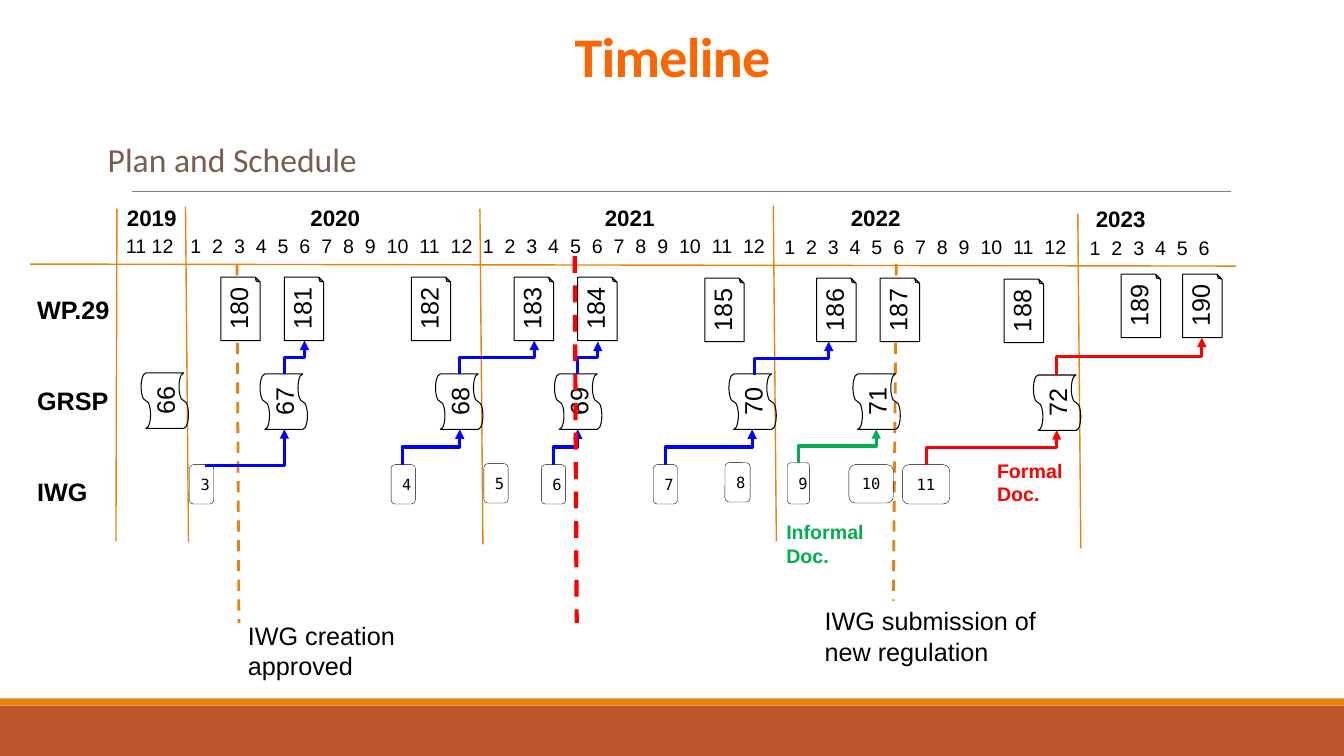
from lxml.etree import SubElement
from pptx import Presentation
from pptx.dml.color import RGBColor
from pptx.enum.dml import MSO_LINE
from pptx.enum.shapes import MSO_CONNECTOR, MSO_SHAPE
from pptx.enum.text import MSO_ANCHOR, MSO_AUTO_SIZE, PP_ALIGN
from pptx.oxml.ns import qn
from pptx.util import Cm, Pt

BLACK, ORANGE, RED, BLUE, GREEN = "000000", "E48312", "FF0000", "0000FF", "00B050"
YEAR = "1  2  3  4  5  6  7  8  9  10  11  12"


def inch(value):
    return Cm(value * 2.54)


def color(code):
    return RGBColor.from_string(code)


def write(frame, text, size=18, font="Arial", ink=BLACK, bold=False,
          align=PP_ALIGN.LEFT, gap=0, lead=None, track=None):
    for i, words in enumerate(text.split("\n")):
        para = frame.paragraphs[0] if i == 0 else frame.add_paragraph()
        para.alignment = align
        para.space_before = Pt(gap if i else 0)
        if lead:
            para.line_spacing = lead
        run = para.add_run()
        run.text = words
        run.font.size = Pt(size)
        run.font.name = font
        run.font.bold = bold
        run.font.color.rgb = color(ink)
        if track:
            run._r.get_or_add_rPr().set("spc", str(track))


class Board:
    def __init__(self, deck):
        self.slide = deck.slides.add_slide(deck.slide_layouts[5])
        self.items = self.slide.shapes

    def title(self, text, *box, **style):
        item = self.items.title
        item.left, item.top, item.width, item.height = map(inch, box)
        item.text_frame.vertical_anchor = MSO_ANCHOR.MIDDLE
        write(item.text_frame, text, **style)

    def text(self, text, *box, wrap=False, **style):
        frame = self.items.add_textbox(*map(inch, box)).text_frame
        frame.word_wrap = wrap
        frame.auto_size = MSO_AUTO_SIZE.SHAPE_TO_FIT_TEXT
        write(frame, text, **style)

    def shape(self, kind, *box, fill=None, width=None):
        item = self.items.add_shape(kind, *map(inch, box))
        item.shadow.inherit = False
        if fill:
            item.fill.solid()
            item.fill.fore_color.rgb = color(fill)
        else:
            item.fill.background()
        if width:
            item.line.color.rgb = color(BLACK)
            item.line.width = Pt(width)
        else:
            item.line.fill.background()
        return item

    def label(self, item, text, wrap=False, **style):
        frame = item.text_frame
        frame.word_wrap = wrap
        frame.vertical_anchor = MSO_ANCHOR.MIDDLE
        write(frame, text, align=PP_ALIGN.CENTER, **style)

    def doc(self, text, x, y):
        item = self.shape(MSO_SHAPE.FOLDED_CORNER, x, y, 0.63, 0.39, fill="FFFFFF", width=0.75)
        fold = item._element.spPr.find(qn("a:prstGeom")).find(qn("a:avLst"))
        fold.clear()
        SubElement(fold, qn("a:gd"), name="adj", fmla="val 12500")
        item.rotation = 270
        self.label(item, text)

    def tape(self, text, x, y):
        item = self.shape(MSO_SHAPE.FLOWCHART_PUNCHED_TAPE, x, y, 0.55, 0.47, width=0.75)
        item.rotation = 270
        self.label(item, text)

    def card(self, text, x, y, w, h):
        item = self.shape(MSO_SHAPE.ROUNDED_RECTANGLE, x, y, w, h, width=0.25)
        self.label(item, text, wrap=True, size=11, font="DejaVu Sans Mono")

    def line(self, *ends, ink=ORANGE, width=1, dash=False, kind=MSO_CONNECTOR.STRAIGHT):
        item = self.items.add_connector(kind, *map(inch, ends))
        item.line.color.rgb = color(ink)
        item.line.width = Pt(width)
        if dash:
            item.line.dash_style = MSO_LINE.DASH
        SubElement(item._element.spPr, qn("a:effectLst"))
        return item

    def arrow(self, x1, y1, x2, y2, ink=BLUE, corner=False):
        ends = x1, y1, x2, y2
        if not corner:
            mid, half = (x1 + x2) / 2, (y1 + y2) / 2
            rise, run = (y1 - y2) / 2, (x2 - x1) / 2
            ends = mid + rise, half + run, mid - rise, half - run
        item = self.line(*ends, ink=ink, width=2.25, kind=MSO_CONNECTOR.ELBOW)
        props = item._element.spPr
        if corner:
            props.find(qn("a:prstGeom")).set("prst", "bentConnector2")
        else:
            props.find(qn("a:xfrm")).set("rot", "5400000")
        SubElement(props.find(qn("a:ln")), qn("a:tailEnd"), type="triangle")


def main():
    deck = Presentation()
    deck.slide_width, deck.slide_height = inch(13.33), inch(7.5)
    board = Board(deck)

    board.shape(MSO_SHAPE.RECTANGLE, 0, 7, 13.33, 0.5, fill="BD582C")
    board.shape(MSO_SHAPE.RECTANGLE, 0, 6.93, 13.33, 0.07, fill=ORANGE)
    board.line(1.31, 1.9, 12.21, 1.9, ink="808080", width=0.5)
    board.title("Timeline", 1.67, 0.05, 10, 1.1, size=40, font="Calibri", ink="FC6500",
                bold=True, align=PP_ALIGN.CENTER, lead=0.85, track=-50)
    board.text("Plan and Schedule", 0.97, 1.33, 8.37, 0.5, wrap=True,
               size=24, font="Calibri", ink="7B5C4E")

    board.line(0.3, 2.62, 12.26, 2.64)
    for x1, y1, x2, y2 in [(1.16, 2.07, 1.15, 5.37), (1.84, 2.05, 1.87, 5.38),
                           (4.76, 2.07, 4.79, 5.4), (7.67, 2.04, 7.7, 5.37),
                           (10.69, 2.12, 10.72, 5.44)]:
        board.line(x1, y1, x2, y2)
    for x1, x2, end in [(2.35, 2.37, 6.18), (8.89, 8.86, 5.96)]:
        board.line(x1, 2.62, x2, end, width=2, dash=True)

    for year, x, y in [("2019", 1.16, 1.98), ("2020", 2.98, 1.98), ("2021", 5.9, 1.98),
                       ("2022", 8.34, 1.98), ("2023", 10.77, 1.99)]:
        board.text(year, x, y, 0.7, 0.37, size=16, bold=True)
    for months, x, y, w in [("11 12", 1.15, 2.27, 0.68), (YEAR, 1.79, 2.27, 3.01),
                            (YEAR, 4.69, 2.27, 3.01), (YEAR, 7.68, 2.28, 3.01),
                            ("1  2  3  4  5  6", 10.71, 2.29, 1.4)]:
        board.text(months, x, y, w, 0.34, size=14)
    board.text("WP.29\nGRSP\nIWG", 0.27, 2.87, 0.96, 2.22, bold=True, gap=43.5)

    docs = [(2.07, 2.87), (2.7, 2.87), (3.96, 2.87), (4.98, 2.87), (5.61, 2.87), (6.87, 2.88),
            (7.98, 2.88), (8.61, 2.88), (9.84, 2.89), (11, 2.84), (11.61, 2.84)]
    for number, spot in enumerate(docs, 180):
        board.doc(str(number), *spot)

    tapes = [(1.36, 3.74), (2.54, 3.75), (4.28, 3.75), (5.46, 3.75),
             (7.19, 3.75), (8.42, 3.75), (10.21, 3.76)]
    for number, spot in enumerate(tapes, 66):
        board.tape(str(number), *spot)

    cards = [(1.88, 4.61, 0.24, 0.39), (3.88, 4.61, 0.24, 0.39), (4.8, 4.6, 0.24, 0.39),
             (5.37, 4.61, 0.24, 0.39), (6.48, 4.61, 0.24, 0.39), (7.19, 4.59, 0.25, 0.39),
             (7.81, 4.59, 0.22, 0.41), (8.42, 4.61, 0.44, 0.38), (8.95, 4.61, 0.47, 0.39)]
    for number, box in enumerate(cards, 3):
        board.card(str(number), *box)

    board.arrow(2.03, 4.62, 2.82, 4.26, corner=True)
    for x1, y1, x2, y2, ink in [
            (3.99, 4.61, 4.56, 4.26, BLUE), (5.49, 4.61, 5.73, 4.26, BLUE),
            (6.6, 4.61, 7.46, 4.26, BLUE), (7.92, 4.59, 8.69, 4.26, GREEN),
            (9.19, 4.61, 10.48, 4.27, RED), (2.82, 3.71, 3.02, 3.38, BLUE),
            (4.56, 3.71, 5.3, 3.38, BLUE), (5.73, 3.71, 5.93, 3.39, BLUE),
            (7.48, 3.72, 8.22, 3.39, BLUE), (10.48, 3.72, 11.92, 3.35, RED)]:
        board.arrow(x1, y1, x2, y2, ink)

    board.text("IWG creation approved", 2.36, 6.1, 1.89, 0.71, wrap=True)
    board.text("IWG submission of new regulation", 8.08, 5.96, 2.69, 0.71, wrap=True)
    board.text("Formal Doc.", 9.79, 4.5, 1.12, 0.57, wrap=True, size=14, ink=RED, bold=True)
    board.text("Informal Doc.", 7.7, 5.11, 1.12, 0.57, wrap=True, size=14, ink=GREEN, bold=True)
    board.line(5.7, 2.54, 5.72, 6.18, ink=RED, width=3, dash=True)

    deck.save("out.pptx")


if __name__ == "__main__":
    main()
